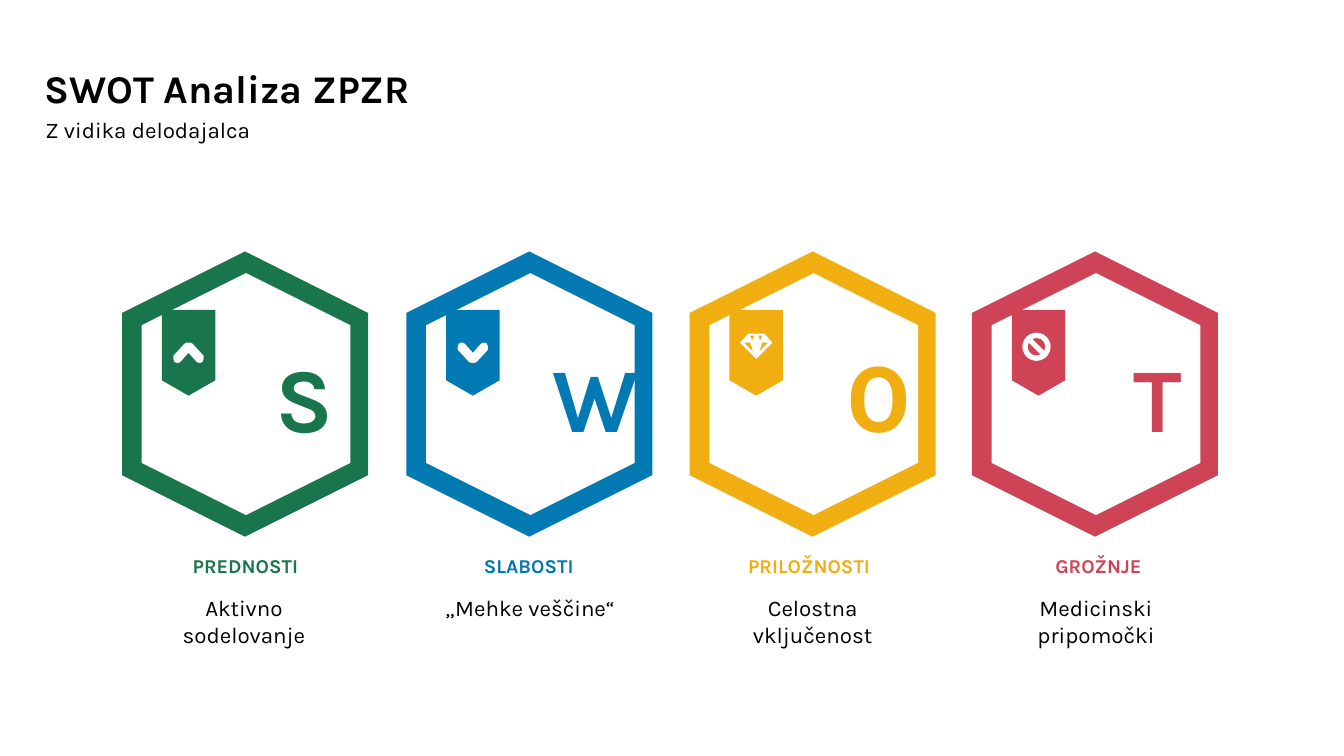
from pptx import Presentation
from pptx.dml.color import RGBColor
from pptx.enum.shapes import MSO_SHAPE
from pptx.enum.text import MSO_ANCHOR, MSO_AUTO_SIZE, PP_ALIGN
from pptx.util import Inches, Pt

HEXAGON, RIBBON, NO_SYMBOL = MSO_SHAPE.HEXAGON, MSO_SHAPE.PENTAGON, MSO_SHAPE.NO_SYMBOL
LEFT, CENTER = PP_ALIGN.LEFT, PP_ALIGN.CENTER
BLACK = RGBColor(0x00, 0x00, 0x00)
WHITE = RGBColor(0xFF, 0xFF, 0xFF)
GREEN = RGBColor(0x19, 0x76, 0x4C)
BLUE = RGBColor(0x01, 0x79, 0xB2)
YELLOW = RGBColor(0xF1, 0xAE, 0x10)
RED = RGBColor(0xCF, 0x43, 0x56)

# Icon outlines in inches around the icon centre; right halves are mirrored
chevron_half = [(0, 0), (0.08, -0.09), (0.1, -0.1), (0.12, -0.1), (0.14, -0.09), (0.15, -0.06),
                (0.15, -0.03), (0.04, 0.09), (0.02, 0.1), (0, 0.1)]
chevron_down = chevron_half + [(-x, y) for x, y in reversed(chevron_half)]
chevron_up = [(x, -y) for x, y in chevron_down]
gem_outline = [(-0.08, -0.13), (0.08, -0.13), (0.16, -0.04), (0, 0.12), (-0.16, -0.04)]
gem_facets = [[(0.12, -0.04), (0.06, -0.04), (0.03, 0.05)],
              [(0.04, -0.06), (0.06, -0.11), (0.02, -0.11)]]
gem = [gem_outline] + gem_facets + [[(-x, y) for x, y in facet] for facet in gem_facets]

# letter, font, colour, hexagon centre, letter left, label left, label, text left, text,
# icon contours (None for the preset sign), icon centre height
quadrants = [
    ("S", "Karla", GREEN, 2.43, 2.63, 1.62, "PREDNOSTI", 1.47, "Aktivno sodelovanje",
     [chevron_up], 3.5),
    ("W", "Karla", BLUE, 5.25, 5.38, 4.43, "SLABOSTI", 4.31, "„Mehke veščine“",
     [chevron_down], 3.5),
    ("O", "Roboto", YELLOW, 8.06, 8.31, 7.21, "PRILOŽNOSTI", 7.11, "Celostna vključenost",
     gem, 3.44),
    ("T", "Karla", RED, 10.86, 11.14, 10.08, "GROŽNJE", 9.92, "Medicinski pripomočki",
     None, 3.44),
]


def add_shape(shapes, kind, center_x, center_y, width, height, color, rotation=90):
    shape = shapes.add_shape(kind, Inches(center_x - width / 2), Inches(center_y - height / 2),
                             Inches(width), Inches(height))
    shape.rotation = rotation
    shape.shadow.inherit = False
    shape.fill.solid()
    shape.fill.fore_color.rgb = color
    shape.line.fill.background()
    return shape


def add_text(shapes, box, text, size, color, bold=False, font="Karla", align=CENTER):
    text_box = shapes.add_textbox(*[Inches(length) for length in box])
    frame = text_box.text_frame
    frame.word_wrap = True
    frame.auto_size = MSO_AUTO_SIZE.SHAPE_TO_FIT_TEXT
    paragraph = frame.paragraphs[0]
    paragraph.text = text
    paragraph.alignment = align
    paragraph.font.name = font
    paragraph.font.size = Pt(size)
    paragraph.font.bold = bold
    paragraph.font.color.rgb = color
    return frame


presentation = Presentation()
presentation.slide_width = Inches(13.33)
presentation.slide_height = Inches(7.5)
slide = presentation.slides.add_slide(presentation.slide_layouts[5])

# Title and subtitle
title = slide.shapes.title
title.left, title.top = Inches(0.44), Inches(0.56)
title.width, title.height = Inches(11.42), Inches(0.55)
title_frame = title.text_frame
title_frame.text = "SWOT Analiza ZPZR"
title_frame.vertical_anchor = MSO_ANCHOR.BOTTOM
title_frame.auto_size = MSO_AUTO_SIZE.NONE
title_paragraph = title_frame.paragraphs[0]
title_paragraph.alignment = LEFT
title_paragraph.font.name = "Karla"
title_paragraph.font.size = Pt(28)
title_paragraph.font.bold = True
title_paragraph.font.color.rgb = BLACK

subtitle_frame = add_text(slide.shapes, (0.45, 1.18, 11.42, 0.51), "Z vidika delodajalca",
                          16, BLACK, align=LEFT)
subtitle_frame.auto_size = MSO_AUTO_SIZE.NONE
for frame in (title_frame, subtitle_frame):
    frame.margin_left = frame.margin_right = frame.margin_top = frame.margin_bottom = 0
    frame.paragraphs[0].line_spacing = 0.9

for (letter, font, color, center, letter_left, label_left, label, text_left, text,
     contours, icon_y) in quadrants:
    # Hexagon ring with ribbon and letter
    badge = slide.shapes.add_group_shape().shapes
    add_shape(badge, HEXAGON, center, 3.91, 2.83, 2.44, color)
    add_shape(badge, HEXAGON, center + 0.01, 3.91, 2.4, 2.07, WHITE)
    ribbon = add_shape(badge, RIBBON, center - 0.56, 3.5, 0.85, 0.53, color)
    ribbon.adjustments[0] = 0.287
    add_text(badge, (letter_left, 3.34, 0.65, 1.19), letter, 65, color, True, font)

    # Ribbon icon
    if contours is None:
        add_shape(badge, NO_SYMBOL, center - 0.58, icon_y, 0.28, 0.28, WHITE, 0)
    else:
        outlines = [[(Inches(center - 0.56 + x), Inches(icon_y + y)) for x, y in contour]
                    for contour in contours]
        builder = badge.build_freeform(*outlines[0][0])
        builder.add_line_segments(outlines[0][1:], close=True)
        for outline in outlines[1:]:
            builder.move_to(*outline[0])
            builder.add_line_segments(outline[1:], close=True)
        icon = builder.convert_to_shape()
        icon.shadow.inherit = False
        icon.fill.solid()
        icon.fill.fore_color.rgb = WHITE
        icon.line.fill.background()

    # Label and description
    add_text(slide.shapes, (label_left, 5.45, 1.63, 0.34), label, 14, color, True)
    add_text(slide.shapes, (text_left, 5.85, 1.9, 0.64), text, 16, BLACK)

presentation.save("out.pptx")
